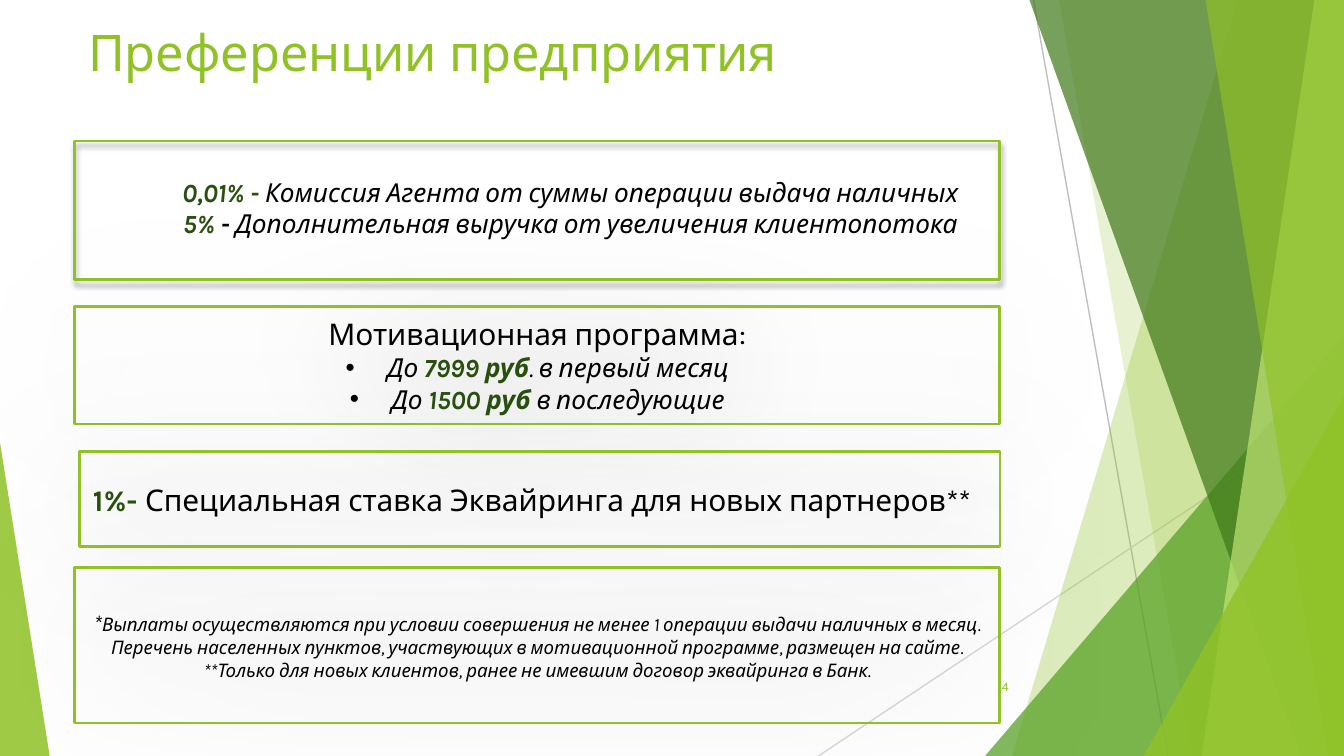
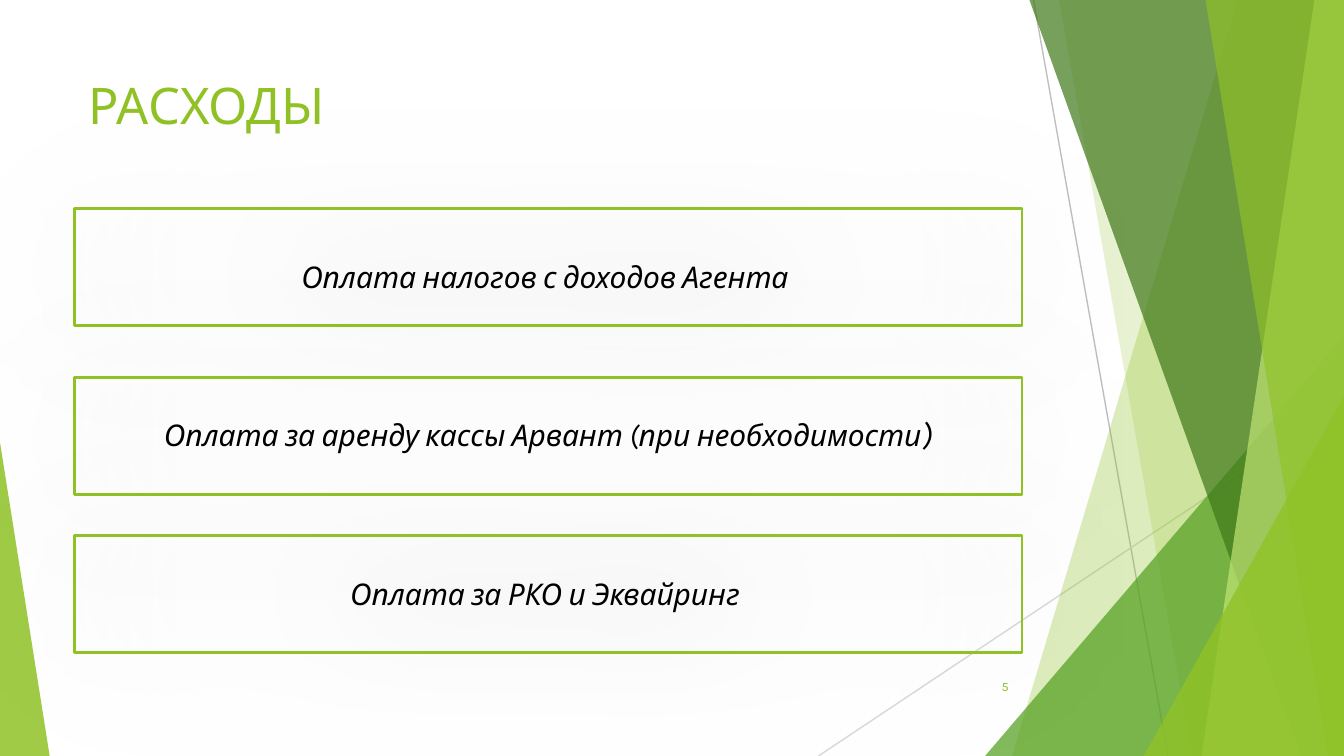
"""Build two green slides on an agent's benefits and costs."""
from dataclasses import dataclass

import pptx
import pptx.dml.color
import pptx.enum.shapes
import pptx.enum.text
import pptx.oxml.ns
import pptx.util
from lxml import etree

PX = 4572
WIDE, HIGH = 2000, 1125
FONT = "Karla"
LIME, DARK, BLACK = "90C226", "2A5010", "000000"
LEFT, SPAN = 111, 1410
BROAD, TALL = 1377, 174
INDENT = 62

ALIGN = pptx.enum.text.PP_ALIGN
ANCHOR = pptx.enum.text.MSO_ANCHOR
KIND = pptx.enum.shapes.MSO_SHAPE
qn = pptx.oxml.ns.qn


@dataclass(frozen=True)
class Area:
    left: int
    top: int
    width: int
    height: int


@dataclass(frozen=True)
class Bit:
    text: str
    size: float = 16
    color: str = BLACK
    bold: bool = False
    slant: bool = False


@dataclass(frozen=True)
class Line:
    bits: tuple[Bit, ...]
    bullet: bool = False


@dataclass(frozen=True)
class Box:
    area: Area
    lines: tuple[Line, ...] = ()
    blur: float = 68
    drop: float = 1.8
    inset: tuple[int, int, int, int] = (20, 10, 20, 10)


@dataclass(frozen=True)
class Note:
    area: Area
    lines: tuple[Line, ...]


@dataclass(frozen=True)
class Ray:
    start: tuple[int, int]
    end: tuple[int, int]
    color: str


@dataclass(frozen=True)
class Band:
    points: tuple[tuple[int, int], ...]
    color: str
    alpha: int


@dataclass(frozen=True)
class Wedge:
    area: Area
    peak: int
    color: str
    alpha: int


@dataclass(frozen=True)
class Page:
    title: str
    top: int
    number: int
    items: tuple[Box | Note, ...]


def slab(top: int, foot: int, color: str, alpha: int) -> Band:
    return Band(((top, 0), (WIDE, 0), (WIDE, HIGH), (foot, HIGH)), color, alpha)


DECOR = (
    Ray((1538, 0), (1738, HIGH), "BFBFBF"),
    Ray((WIDE, 604), (1218, HIGH), "D9D9D9"),
    slab(1842, 1506, LIME, 30),
    slab(1576, 1774, LIME, 20),
    Wedge(Area(1466, 500, 534, 625), 1, "54A021", 72),
    slab(1532, 1936, "3F7819", 70),
    slab(1956, 1788, "C0E474", 70),
    slab(1794, 1976, LIME, 65),
    Wedge(Area(1702, 590, 298, 535), 1, LIME, 80),
    Wedge(Area(0, 658, 74, 467), 0, LIME, 85),
)


def plain(text: str, size: float = 14) -> Bit:
    return Bit(text, size, slant=True)


def strong(text: str, color: str = DARK) -> Bit:
    return Bit(text, 14, color, True, True)


PAGES = (
    Page("Преференции предприятия", 22, 4, (
        Note(Area(176, 252, 1346, 114), (
            Line((strong("0,01% - "),
                  plain("Комиссия Агента от суммы операции выдача наличных"))),
            Line((strong("5% "), strong("- ", BLACK),
                  plain("Дополнительная выручка от увеличения клиентопотока"))),
        )),
        Box(Area(LEFT, 210, BROAD, 206), blur=3, drop=2),
        Box(Area(LEFT, 456, BROAD, 175), (
            Line((Bit("Мотивационная программа:"),)),
            Line((plain("До "), strong("7999 руб"), plain(". в первый месяц")), True),
            Line((plain("До "), strong("1500 руб "), plain("в последующие")), True),
        )),
        Box(Area(118, 672, 1370, 142), (
            Line((Bit("1%- ", color=DARK, bold=True),
                  Bit("Специальная ставка Эквайринга для новых партнеров**"))),
        ), inset=(9, 10, 31, 10)),
        Box(Area(LEFT, 844, BROAD, 232), (
            Line((plain("*", 12),
                  plain("Выплаты осуществляются при условии совершения не менее 1 операции "
                        "выдачи наличных в месяц. Перечень населенных пунктов, участвующих "
                        "в мотивационной программе, размещен на сайте.", 10))),
            Line((plain("**Только для новых клиентов, ранее не имевшим договор "
                        "эквайринга в Банк.", 10),)),
        )),
    )),
    Page("РАСХОДЫ", 100, 5, (
        Box(Area(LEFT, 310, SPAN, TALL),
            (Line((plain("Оплата налогов с доходов Агента ", 16),)),),
            inset=(20, 40, 20, 10)),
        Box(Area(LEFT, 562, SPAN, TALL)),
        Box(Area(LEFT, 797, SPAN, TALL),
            (Line((plain("Оплата за РКО и Эквайринг ", 16),)),)),
        Note(Area(LEFT, 604, SPAN, 80), (
            Line((plain("Оплата за аренду кассы Арвант (при необходимости", 16),
                  plain(")", 18))),
        )),
    )),
)


def emu(size: int) -> int:
    return size * PX


def place(area: Area) -> tuple[int, int, int, int]:
    return emu(area.left), emu(area.top), emu(area.width), emu(area.height)


def tint(code: str) -> pptx.dml.color.RGBColor:
    return pptx.dml.color.RGBColor.from_string(code)


def style(run, bit: Bit) -> None:
    font = run.font
    font.name, font.size = FONT, pptx.util.Pt(bit.size)
    font.bold, font.italic = bit.bold, bit.slant
    font.color.rgb = tint(bit.color)


def write(frame, lines: tuple[Line, ...], align=ALIGN.CENTER) -> None:
    frame.word_wrap = True
    for rank, line in enumerate(lines):
        para = frame.add_paragraph() if rank else frame.paragraphs[0]
        para.alignment = align
        for bit in line.bits:
            run = para.add_run()
            run.text = bit.text
            style(run, bit)
        if line.bullet:
            props = para._p.get_or_add_pPr()
            props.set("marL", str(emu(INDENT)))
            props.set("indent", str(-emu(INDENT)))
            etree.SubElement(props, qn("a:buFont")).set("typeface", "Arial")
            etree.SubElement(props, qn("a:buChar")).set("char", "•")


def paint(shape, color: str, alpha: int) -> None:
    shape.shadow.inherit = False
    shape.fill.solid()
    shape.fill.fore_color.rgb = tint(color)
    mark = next(shape.element.iter(qn("a:srgbClr")))
    etree.SubElement(mark, qn("a:alpha")).set("val", str(alpha * 1000))
    shape.line.fill.background()


def shade(shape, box: Box) -> None:
    shape.shadow.inherit = False
    effects = shape.element.spPr.find(qn("a:effectLst"))
    cast = etree.SubElement(effects, qn("a:outerShdw"), {
        "blurRad": str(pptx.util.Pt(box.blur)), "dist": str(pptx.util.Pt(box.drop)),
        "dir": "5400000", "algn": "ctr", "rotWithShape": "0"})
    color = etree.SubElement(cast, qn("a:srgbClr"), {"val": BLACK})
    etree.SubElement(color, qn("a:alpha"), {"val": "35000"})


def add_ray(slide, ray: Ray) -> None:
    ends = [emu(size) for size in ray.start + ray.end]
    line = slide.shapes.add_connector(pptx.enum.shapes.MSO_CONNECTOR.STRAIGHT, *ends)
    line.line.color.rgb = tint(ray.color)
    line.line.width = pptx.util.Pt(0.75)
    etree.SubElement(line.element.spPr, qn("a:effectLst"))


def add_band(slide, band: Band) -> None:
    first, *rest = band.points
    form = slide.shapes.build_freeform(*first, scale=PX)
    form.add_line_segments(rest, close=True)
    paint(form.convert_to_shape(), band.color, band.alpha)


def add_wedge(slide, wedge: Wedge) -> None:
    shape = slide.shapes.add_shape(KIND.ISOSCELES_TRIANGLE, *place(wedge.area))
    shape.adjustments[0] = wedge.peak
    paint(shape, wedge.color, wedge.alpha)


def add_box(slide, box: Box) -> None:
    shape = slide.shapes.add_shape(KIND.RECTANGLE, *place(box.area))
    shade(shape, box)
    shape.fill.background()
    shape.line.color.rgb = tint(LIME)
    shape.line.width = pptx.util.Pt(1.5)
    frame = shape.text_frame
    frame.vertical_anchor = ANCHOR.MIDDLE
    (frame.margin_left, frame.margin_top,
     frame.margin_right, frame.margin_bottom) = map(emu, box.inset)
    write(frame, box.lines)


def add_note(slide, note: Note) -> None:
    frame = slide.shapes.add_textbox(*place(note.area)).text_frame
    frame.auto_size = pptx.enum.text.MSO_AUTO_SIZE.SHAPE_TO_FIT_TEXT
    write(frame, note.lines)


def add_title(slide, text: str, top: int) -> None:
    title = slide.shapes.title
    title.left, title.top, title.width, title.height = place(Area(LEFT, top, SPAN, 216))
    frame = title.text_frame
    frame.text = text
    frame.word_wrap = True
    frame.auto_size = pptx.enum.text.MSO_AUTO_SIZE.NONE
    frame.vertical_anchor = ANCHOR.TOP
    frame.paragraphs[0].alignment = ALIGN.LEFT
    style(frame.paragraphs[0].runs[0], Bit(text, 27, LIME))


def add_number(slide, number: int) -> None:
    frame = slide.shapes.add_textbox(*place(Area(1409, 992, 112, 60))).text_frame
    frame.vertical_anchor = ANCHOR.MIDDLE
    write(frame, (Line((Bit(str(number), 6.8, LIME),)),), ALIGN.RIGHT)


DRAW = {Ray: add_ray, Band: add_band, Wedge: add_wedge, Box: add_box, Note: add_note}


def add_page(deck, page: Page) -> None:
    slide = deck.slides.add_slide(deck.slide_layouts[5])
    for item in DECOR:
        DRAW[type(item)](slide, item)
    add_title(slide, page.title, page.top)
    add_number(slide, page.number)
    for item in page.items:
        DRAW[type(item)](slide, item)


def main() -> None:
    deck = pptx.Presentation()
    deck.slide_width, deck.slide_height = emu(WIDE), emu(HIGH)
    for page in PAGES:
        add_page(deck, page)
    deck.save("out.pptx")


if __name__ == "__main__":
    main()
